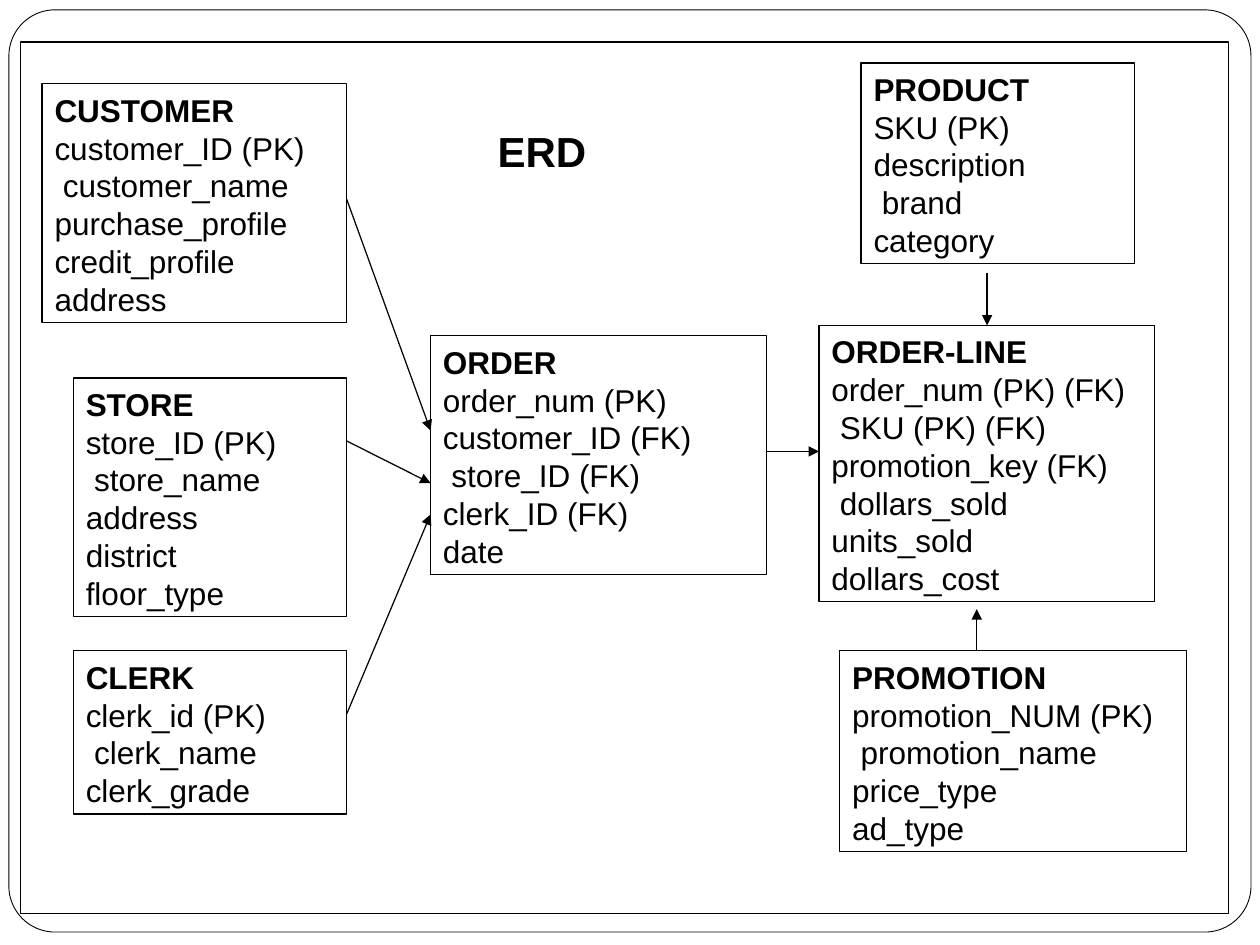
from dataclasses import dataclass

from lxml.etree import SubElement
from pptx import Presentation
from pptx.dml.color import RGBColor
from pptx.enum.shapes import MSO_CONNECTOR as Connector, MSO_SHAPE as Preset
from pptx.enum.text import MSO_ANCHOR as Anchor, PP_ALIGN as Align
from pptx.oxml.ns import qn
from pptx.util import Cm, Pt

COLORS = {"ink": "000000"}
INK = RGBColor.from_string(COLORS["ink"])
FONT = "Arial"
LINE_HEIGHT = 0.76
BOX_PADDING = 0.25
TEXT_INSET = 0.25
FIELD_INDENT = 0.17


@dataclass
class Entity:
    name: str
    left: float
    top: float
    width: float
    fields: list[str]
    indented: tuple[str, ...]

    @property
    def height(self) -> float:
        return BOX_PADDING + LINE_HEIGHT * (len(self.fields) + 1)


@dataclass
class Relation:
    start: tuple[float, float]
    end: tuple[float, float]


ENTITIES = [
    Entity("ORDER", 8.68, 6.77, 6.77,
           ["order_num (PK)", "customer_ID (FK)", "store_ID (FK)", "clerk_ID (FK)", "date"],
           ("store_ID (FK)",)),
    Entity("STORE", 1.48, 7.62, 5.51,
           ["store_ID (PK)", "store_name", "address", "district", "floor_type"],
           ("store_name",)),
    Entity("CLERK", 1.48, 13.12, 5.51,
           ["clerk_id (PK)", "clerk_name", "clerk_grade"],
           ("clerk_name",)),
    Entity("PRODUCT", 17.36, 1.27, 5.51,
           ["SKU (PK)", "description", "brand", "category"],
           ("brand",)),
    Entity("CUSTOMER", 0.85, 1.69, 6.14,
           ["customer_ID (PK)", "customer_name", "purchase_profile", "credit_profile", "address"],
           ("customer_name",)),
    Entity("PROMOTION", 16.93, 13.12, 6.99,
           ["promotion_NUM (PK)", "promotion_name", "price_type", "ad_type"],
           ("promotion_name",)),
    Entity("ORDER-LINE", 16.51, 6.56, 6.77,
           ["order_num (PK) (FK)", "SKU (PK) (FK)", "promotion_key (FK)",
            "dollars_sold", "units_sold", "dollars_cost"],
           ("SKU (PK) (FK)", "dollars_sold")),
]

RELATIONS = [
    Relation((6.99, 4.02), (8.68, 8.68)),
    Relation((6.99, 8.89), (8.68, 9.74)),
    Relation((6.99, 14.39), (8.68, 10.37)),
    Relation((15.45, 9.1), (16.51, 9.1)),
    Relation((19.9, 5.5), (19.9, 6.56)),
    Relation((19.69, 13.12), (19.69, 12.28)),
]


def prepare_frame(shape, left: float = 0, top: float = 0) -> None:
    """Set top-anchored, wrapping text with the given insets."""
    frame = shape.text_frame
    frame.word_wrap = True
    frame.vertical_anchor = Anchor.TOP
    frame.margin_left, frame.margin_top = Cm(left), Cm(top)
    frame.margin_right = frame.margin_bottom = 0


def write(paragraph, text: str, *, size: float = 18, bold: bool = False,
          indent: float = 0, spacing: float | None = None) -> None:
    properties = paragraph._p.get_or_add_pPr()
    properties.set("marL", str(Cm(indent)))
    properties.set("indent", "0")
    paragraph.alignment = Align.LEFT
    paragraph.space_before = paragraph.space_after = Pt(0)
    if spacing:
        paragraph.line_spacing = Pt(spacing)
    run = paragraph.add_run()
    run.text = text
    run.font.name, run.font.size, run.font.bold = FONT, Pt(size), bold
    run.font.color.rgb = INK


def add_outline(slide, preset: Preset, left: float, top: float,
                width: float, height: float, weight: float = 0.75):
    shape = slide.shapes.add_shape(preset, Cm(left), Cm(top), Cm(width), Cm(height))
    shape.shadow.inherit = False
    shape.fill.background()
    shape.line.color.rgb = INK
    shape.line.width = Pt(weight)
    return shape


def add_entity(slide, entity: Entity) -> None:
    shape = add_outline(slide, Preset.RECTANGLE, entity.left, entity.top,
                        entity.width, entity.height)
    prepare_frame(shape, left=TEXT_INSET, top=0.14)
    frame = shape.text_frame
    write(frame.paragraphs[0], entity.name, bold=True, spacing=21.6)
    for field in entity.fields:
        indent = FIELD_INDENT if field in entity.indented else 0
        write(frame.add_paragraph(), field, indent=indent, spacing=21.6)


def add_relation(slide, relation: Relation) -> None:
    points = [Cm(value) for value in relation.start + relation.end]
    connector = slide.shapes.add_connector(Connector.STRAIGHT, *points)
    connector.line.color.rgb = INK
    connector.line.width = Pt(0.7)
    SubElement(connector.line._get_or_add_ln(), qn("a:tailEnd"), type="triangle")
    SubElement(connector._element.spPr, qn("a:effectLst"))


def add_title(slide, text: str) -> None:
    title = slide.shapes.title
    title.left, title.top, title.width, title.height = Cm(10), Cm(2.39), Cm(2.1), Cm(1.1)
    prepare_frame(title, left=0.03, top=0.13)
    write(title.text_frame.paragraphs[0], text, size=24, bold=True, spacing=None)


def main() -> None:
    presentation = Presentation()
    presentation.slide_width, presentation.slide_height = Cm(25.4), Cm(19.05)
    slide = presentation.slides.add_slide(presentation.slide_layouts.get_by_name("Title Only"))

    border = add_outline(slide, Preset.ROUNDED_RECTANGLE, 0.18, 0.2, 25.04, 18.59, weight=0.5)
    border.adjustments[0] = 0.05
    add_outline(slide, Preset.RECTANGLE, 0.42, 0.85, 24.34, 17.57)
    for entity in ENTITIES:
        add_entity(slide, entity)
    for relation in RELATIONS:
        add_relation(slide, relation)
    add_title(slide, "ERD")
    presentation.save("out.pptx")


if __name__ == "__main__":
    main()
